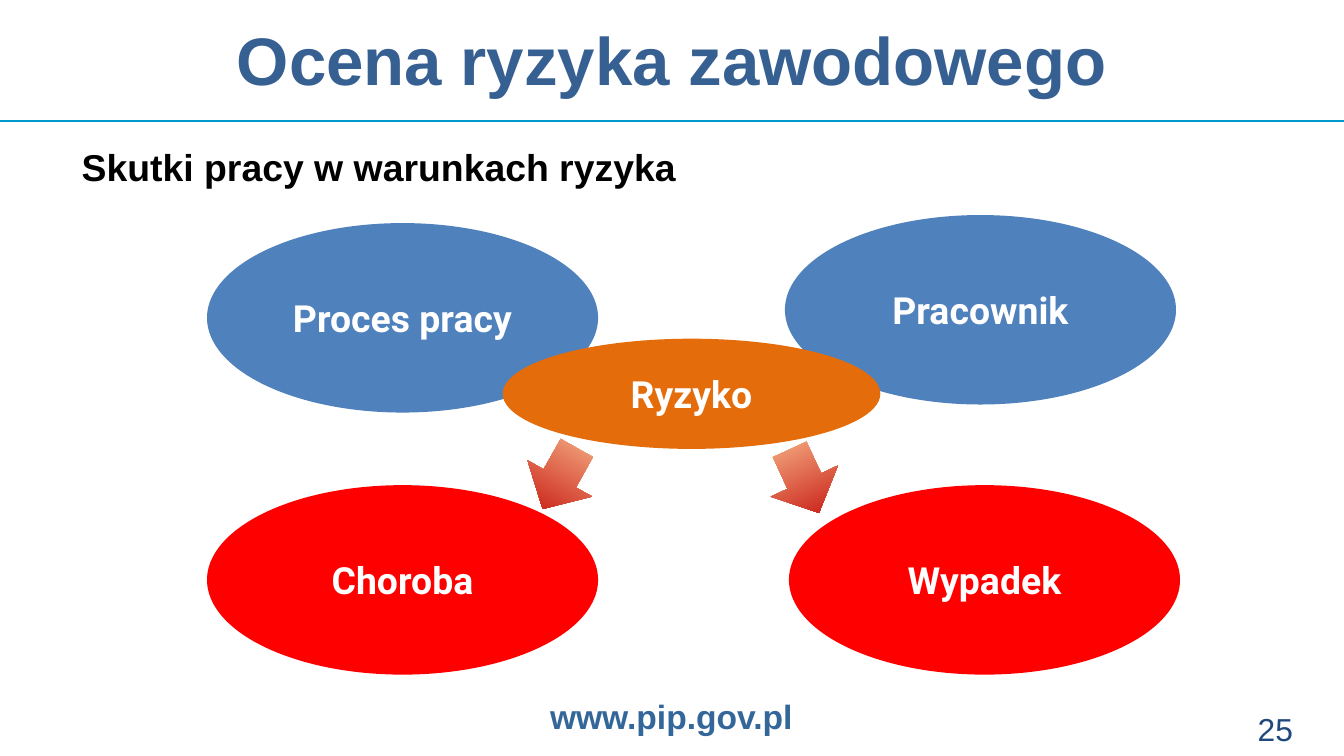
from lxml import etree
from pptx import Presentation
from pptx.dml.color import RGBColor
from pptx.enum.shapes import MSO_CONNECTOR, MSO_SHAPE
from pptx.enum.text import MSO_ANCHOR, PP_ALIGN
from pptx.oxml.ns import qn
from pptx.util import Inches, Pt

LEFT, CENTER, RIGHT = PP_ALIGN.LEFT, PP_ALIGN.CENTER, PP_ALIGN.RIGHT
TOP, MIDDLE = MSO_ANCHOR.TOP, MSO_ANCHOR.MIDDLE
OVAL, ARROW = MSO_SHAPE.OVAL, MSO_SHAPE.DOWN_ARROW
STRAIGHT = MSO_CONNECTOR.STRAIGHT

WHITE = RGBColor(0xFF, 0xFF, 0xFF)
BLACK = RGBColor(0x00, 0x00, 0x00)
NAVY = RGBColor(0x1F, 0x49, 0x7D)
STEEL = RGBColor(0x33, 0x66, 0x99)
TITLE = RGBColor(0x37, 0x60, 0x92)
CYAN = RGBColor(0x00, 0x99, 0xCC)
BLUE = RGBColor(0x4F, 0x81, 0xBD)
RED = RGBColor(0xFF, 0x00, 0x00)
ORANGE = RGBColor(0xE4, 0x6C, 0x0A)
PEACH = RGBColor(0xFA, 0xC0, 0x90)
CRIMSON = RGBColor(0xC0, 0x00, 0x00)


def write(shape, text, size=20, font="Arial", color=BLACK, bold=True,
          align=LEFT, anchor=TOP, wrap=False):
    frame = shape.text_frame
    frame.word_wrap = wrap
    frame.vertical_anchor = anchor
    par = frame.paragraphs[0]
    par.alignment = align
    run = par.add_run()
    run.text = text
    run.font.size = Pt(size)
    run.font.name = font
    run.font.bold = bold
    run.font.color.rgb = color


def add_label(slide, box, text, **style):
    shape = slide.shapes.add_textbox(*map(Inches, box))
    write(shape, text, **style)


def add_plain(slide, kind, box):
    shape = slide.shapes.add_shape(kind, *map(Inches, box))
    shape.shadow.inherit = False
    shape.line.fill.background()
    return shape


def add_oval(slide, box, text, color):
    oval = add_plain(slide, OVAL, box)
    oval.fill.solid()
    oval.fill.fore_color.rgb = color
    write(oval, text, font="Roboto", color=WHITE, align=CENTER, anchor=MIDDLE)


def add_arrow(slide, box, angle):
    arrow = add_plain(slide, ARROW, box)
    arrow.rotation = angle
    arrow.adjustments[0] = 0.5
    arrow.adjustments[1] = 0.5
    arrow.fill.gradient()
    arrow.fill.gradient_angle = 270
    for stop, color, place in zip(arrow.fill.gradient_stops, (PEACH, CRIMSON), (0, 1)):
        stop.color.rgb = color
        stop.position = place


def add_header(slide, left, top, width):
    rule = slide.shapes.add_connector(
        STRAIGHT, Inches(left), Inches(top + 0.9),
        Inches(left + width), Inches(top + 0.9))
    rule.line.color.rgb = CYAN
    rule.line.width = Pt(1.5)
    etree.SubElement(rule._element.spPr, qn("a:effectLst"))
    add_label(slide, (left, top + 0.09, width, 0.92), "Ocena ryzyka zawodowego",
              size=36, color=TITLE, align=CENTER, wrap=True)
    add_label(slide, (left + 0.51, top + 1.02, 4.66, 0.44),
              "Skutki pracy w warunkach ryzyka")


def add_risk(slide, left, top):
    wide, high = 2.91, 1.41
    ovals = (
        (0, 0.06, "Proces pracy", BLUE),
        (0, 2.01, "Choroba", RED),
        (4.3, 0, "Pracownik", BLUE),
        (4.33, 2.01, "Wypadek", RED),
    )
    for x, y, text, color in ovals:
        add_oval(slide, (left + x, top + y, wide, high), text, color)
    add_oval(slide, (left + 2.2, top + 0.92, 2.81, 0.82), "Ryzyko", ORANGE)
    for x, y, angle in ((2.35, 1.7, 29.3), (4.17, 1.72, 335.2)):
        add_arrow(slide, (left + x, top + y, 0.55, 0.52), angle)


def add_footer(slide, left, top):
    add_label(slide, (left + 3.82, top, 2.35, 0.3), "www.pip.gov.pl",
              size=18, color=STEEL, align=CENTER, anchor=MIDDLE)
    add_label(slide, (left + 9.16, top + 0.05, 0.56, 0.3), "25",
              size=17, color=NAVY, bold=False, align=RIGHT, wrap=True)


def main():
    deck = Presentation()
    deck.slide_width = Inches(10)
    deck.slide_height = deck.slide_width * 9 // 16
    slide = deck.slides.add_slide(deck.slide_layouts[6])
    add_header(slide, 0, 0, 10)
    add_risk(slide, 1.54, 1.6)
    add_footer(slide, 0, 5.18)
    deck.save("out.pptx")


if __name__ == "__main__":
    main()
